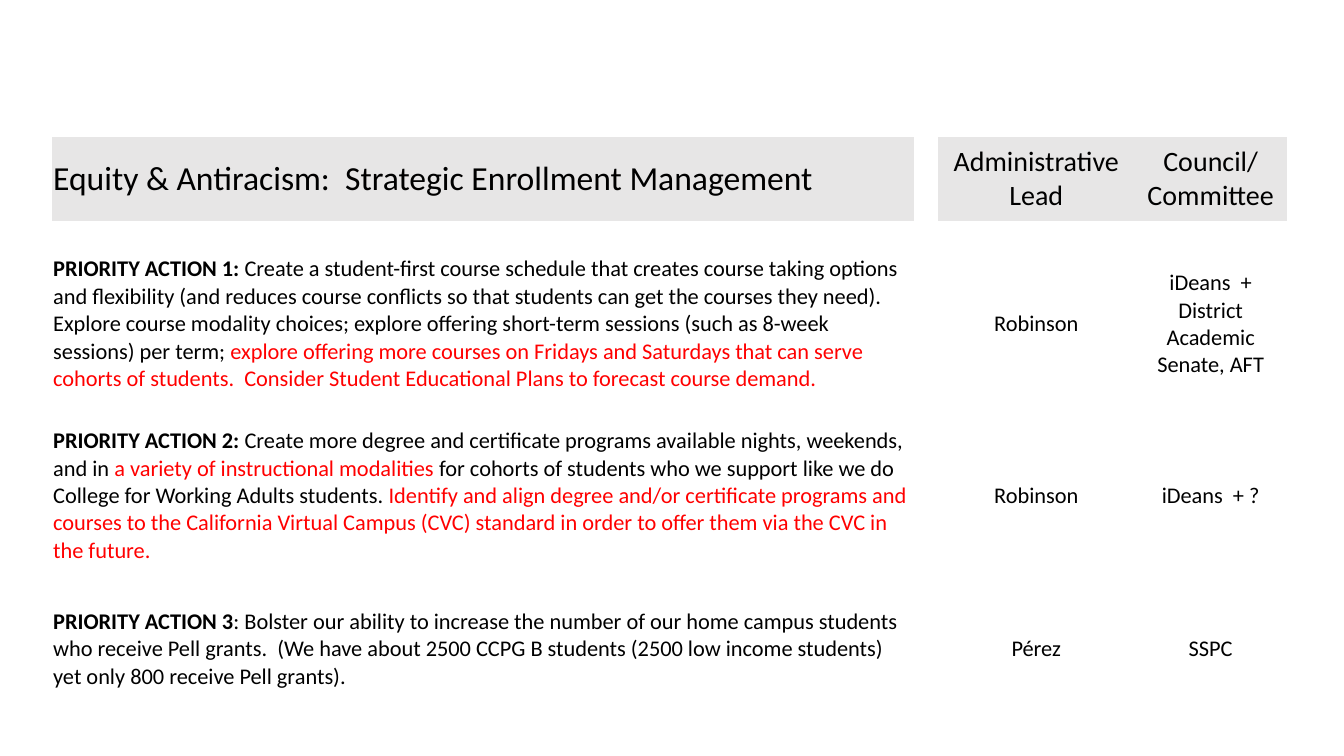
import pptx
import pptx.util
import pptx.dml.color
import pptx.enum.text
import pptx.oxml.ns

Cm = pptx.util.Cm
Pt = pptx.util.Pt
RGBColor = pptx.dml.color.RGBColor
ALIGN = pptx.enum.text.PP_ALIGN
ANCHOR = pptx.enum.text.MSO_ANCHOR

BLACK = RGBColor(0, 0, 0)
RED = RGBColor(255, 0, 0)
HEADER_GREY = RGBColor(0xE7, 0xE6, 0xE6)
NO_STYLE_NO_GRID = "{2D5ABB26-0587-4C30-8999-92F81FD0307C}"

COLUMN_WIDTHS = [21.72, 0.61, 4.93, 3.86]
HEADER_HEIGHT = 2.11
SPACER_HEIGHT = 0.86

CELL_FORMAT = {
    "margin_left": Cm(0.02),
    "margin_top": Cm(0.02),
    "margin_right": Cm(0.02),
    "margin_bottom": Cm(0),
    "vertical_anchor": ANCHOR.MIDDLE,
}
BOLD = {"bold": True}
PLAIN = {"bold": False}
ADDED = {"bold": False, "color": RED}

HEADINGS = [
    ("Equity & Antiracism:  Strategic Enrollment Management", 24),
    ("Administrative Lead", 20),
    ("Council/ Committee", 20),
]
ACTIONS = [
    {
        "height": 3.46,
        "anchor": ANCHOR.BOTTOM,
        "runs": [
            ("PRIORITY ACTION 1: ", BOLD),
            ("Create a student-first course schedule that creates course taking "
             "options and flexibility (and reduces course conflicts so that students "
             "can get the courses they need). Explore course modality choices; explore "
             "offering short-term sessions (such as 8-week sessions) per term; ", PLAIN),
            ("explore offering more courses on Fridays and Saturdays that can serve "
             "cohorts of students.  Consider Student Educational Plans to forecast "
             "course demand.", ADDED),
        ],
        "lead": "Robinson",
        "council": "iDeans  + District Academic Senate, AFT",
    },
    {
        "height": 3.46,
        "anchor": ANCHOR.BOTTOM,
        "runs": [
            ("PRIORITY ACTION 2: ", BOLD),
            ("Create more degree and certificate programs available nights, "
             "weekends, and in ", PLAIN),
            ("a variety of instructional modalities", ADDED),
            (" for cohorts of students who we support like we do College for "
             "Working Adults students. ", PLAIN),
            ("Identify and align degree and/or certificate programs and courses to "
             "the California Virtual Campus (CVC) standard in order to offer them via "
             "the CVC in the future.", ADDED),
        ],
        "lead": "Robinson",
        "council": "iDeans  + ?",
    },
    {
        "height": 2.54,
        "anchor": ANCHOR.MIDDLE,
        "runs": [
            ("PRIORITY ACTION 3", BOLD),
            (": Bolster our ability to increase the number of our home campus students "
             "who receive Pell grants.  (We have about 2500 CCPG B students (2500 low "
             "income students) yet only 800 receive Pell grants).", PLAIN),
        ],
        "lead": "Pérez",
        "council": "SSPC",
    },
]


def apply_format(target, values):
    for name, value in values.items():
        setattr(target, name, value)


def fill_cell(cell, runs, size, alignment):
    paragraph = cell.text_frame.paragraphs[0]
    paragraph.alignment = alignment
    for text, style in runs:
        run = paragraph.add_run()
        run.text = text
        apply_format(run.font, {"name": "Calibri", "size": Pt(size), "bold": style["bold"]})
        run.font.color.rgb = style.get("color", BLACK)


def add_plan_table(slide, heights):
    frame = slide.shapes.add_table(
        len(heights), len(COLUMN_WIDTHS), Cm(1.32), Cm(3.45),
        Cm(sum(COLUMN_WIDTHS)), Cm(sum(heights)))
    table = frame.table
    apply_format(table, {"first_row": False, "horz_banding": False})
    for style_id in frame.element.iter(pptx.oxml.ns.qn("a:tableStyleId")):
        style_id.text = NO_STYLE_NO_GRID
    for column, width in zip(table.columns, COLUMN_WIDTHS):
        column.width = Cm(width)
    for row, height in zip(table.rows, heights):
        row.height = Cm(height)
    for cell in table.iter_cells():
        apply_format(cell, CELL_FORMAT)
        cell.fill.background()
    return table


def add_headings(table):
    for column, (text, size) in zip((0, 2, 3), HEADINGS):
        cell = table.cell(0, column)
        cell.fill.solid()
        cell.fill.fore_color.rgb = HEADER_GREY
        alignment = ALIGN.CENTER if column else ALIGN.LEFT
        fill_cell(cell, [(text, PLAIN)], size, alignment)


def add_action(table, row, action):
    cell = table.cell(row, 0)
    cell.vertical_anchor = action["anchor"]
    fill_cell(cell, action["runs"], 16, ALIGN.LEFT)
    for column, key in ((2, "lead"), (3, "council")):
        fill_cell(table.cell(row, column), [(action[key], PLAIN)], 16, ALIGN.CENTER)


def main():
    presentation = pptx.Presentation()
    apply_format(presentation, {"slide_width": Cm(33.87), "slide_height": Cm(19.05)})
    slide = presentation.slides.add_slide(presentation.slide_layouts[6])
    heights = [HEADER_HEIGHT]
    for action in ACTIONS:
        heights += [SPACER_HEIGHT, action["height"]]
    table = add_plan_table(slide, heights)
    add_headings(table)
    for index, action in enumerate(ACTIONS):
        add_action(table, 2 * index + 2, action)
    presentation.save("out.pptx")


if __name__ == "__main__":
    main()
